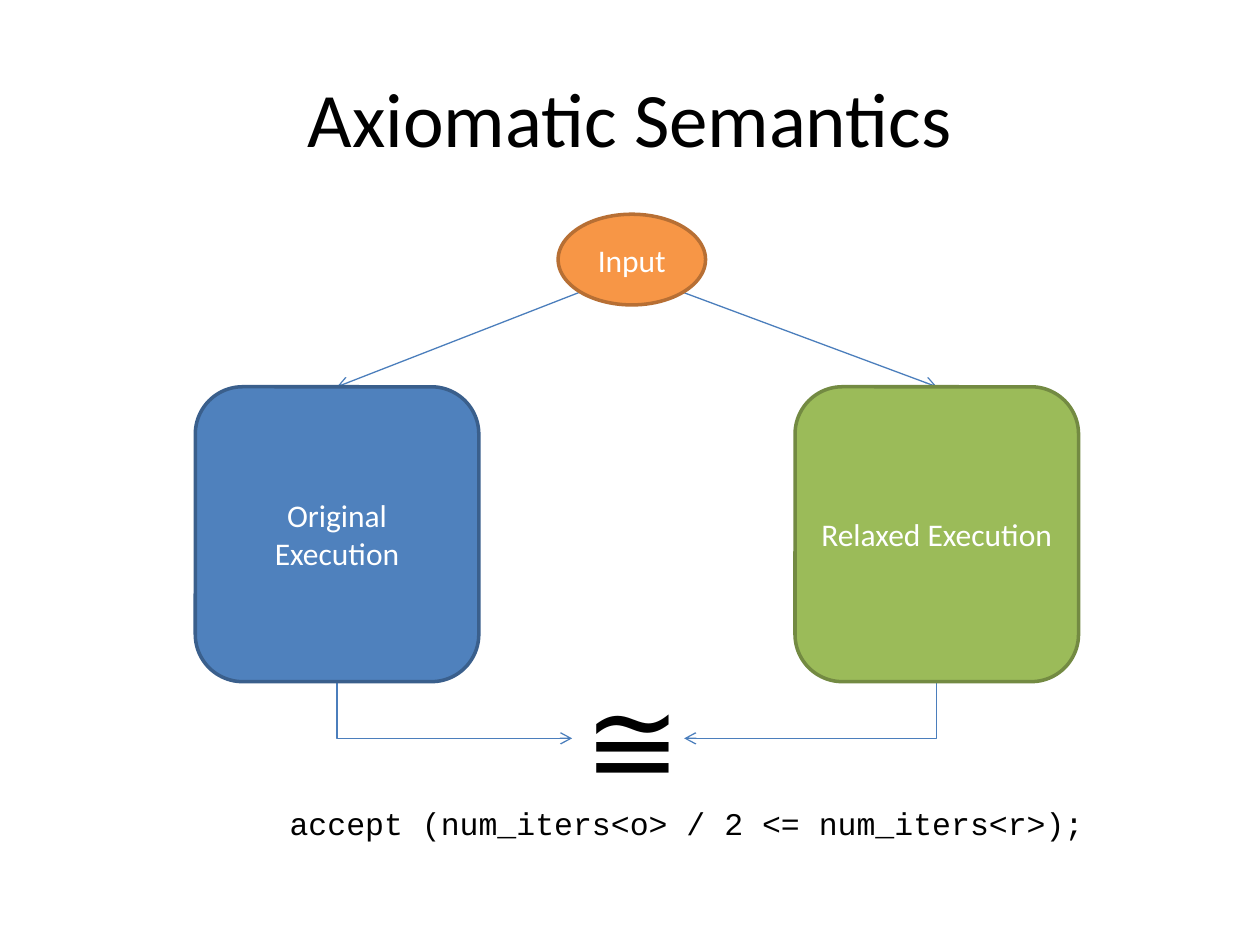
"""Builds the Axiomatic Semantics slide."""
from lxml import etree
from pptx import Presentation
from pptx.dml.color import RGBColor
from pptx.enum.shapes import MSO_CONNECTOR, MSO_SHAPE
from pptx.enum.text import MSO_ANCHOR, MSO_AUTO_SIZE, PP_ALIGN
from pptx.oxml.ns import qn
from pptx.util import Inches, Pt

STRAIGHT, ELBOW = MSO_CONNECTOR.STRAIGHT, MSO_CONNECTOR.ELBOW
OVAL, ROUNDED = MSO_SHAPE.OVAL, MSO_SHAPE.ROUNDED_RECTANGLE
MIDDLE, TOP = MSO_ANCHOR.MIDDLE, MSO_ANCHOR.TOP
CENTER, LEFT = PP_ALIGN.CENTER, PP_ALIGN.LEFT
GROW = MSO_AUTO_SIZE.SHAPE_TO_FIT_TEXT
BLACK, WHITE, ARROW = "000000", "FFFFFF", "4B7EBC"


def color(value):
    return RGBColor.from_string(value)


class SlideBuilder:
    def __init__(self, deck):
        self.page = deck.slides.add_slide(deck.slide_layouts[5])

    def put_text(self, box, text, size, ink, align=CENTER, font="Calibri", **frame_format):
        frame = box.text_frame
        for name, value in frame_format.items():
            setattr(frame, name, value)
        para = frame.paragraphs[0]
        para.alignment = align
        span = para.add_run()
        span.text = text
        for name, value in {"name": font, "size": Pt(size)}.items():
            setattr(span.font, name, value)
        span.font.color.rgb = color(ink)

    def title(self, text, bounds):
        box = self.page.shapes.title
        for name, value in zip(("left", "top", "width", "height"), bounds):
            setattr(box, name, Inches(value))
        self.put_text(box, text, 44, BLACK, vertical_anchor=MIDDLE)

    def label(self, text, bounds, size, font="Calibri", wrap=True):
        box = self.page.shapes.add_textbox(*map(Inches, bounds))
        self.put_text(box, text, size, BLACK, LEFT, font,
                      word_wrap=wrap, auto_size=GROW, vertical_anchor=TOP)

    def node(self, kind, text, bounds, fill, outline):
        box = self.page.shapes.add_shape(kind, *map(Inches, bounds))
        box.shadow.inherit = False
        box.fill.solid()
        box.fill.fore_color.rgb = color(fill)
        box.line.color.rgb = color(outline)
        box.line.width = Pt(2)
        self.put_text(box, text, 18, WHITE, word_wrap=True, vertical_anchor=MIDDLE)

    def arrow(self, kind, start, end):
        link = self.page.shapes.add_connector(kind, *map(Inches, start + end))
        link.line.color.rgb = color(ARROW)
        link.line.width = Pt(0.75)
        properties = link.element.spPr
        outline = properties.find(qn("a:ln"))
        etree.SubElement(outline, qn("a:tailEnd"), type="arrow")
        etree.SubElement(properties, qn("a:effectLst"))
        return link

    def corner_arrow(self, start, end):
        """Draws an arrow that runs down first and then sideways."""
        across, down = abs(end[0] - start[0]), end[1] - start[1]
        left = (start[0] + end[0] - down) / 2
        top = (start[1] + end[1] - across) / 2
        link = self.arrow(ELBOW, (left, top), (left + down, top + across))
        properties = link.element.spPr
        properties.find(qn("a:prstGeom")).set("prst", "bentConnector2")
        transform = properties.find(qn("a:xfrm"))
        if end[0] > start[0]:
            transform.set("rot", str(270 * 60000))
            transform.set("flipH", "1")
        else:
            transform.set("rot", str(90 * 60000))


def main():
    deck = Presentation()
    deck.slide_width, deck.slide_height = Inches(10), Inches(7.5)
    slide = SlideBuilder(deck)
    slide.title("Axiomatic Semantics", (0.5, 0.3, 9, 1.25))

    node_top, node_width, node_height = 3.07, 2.25, 2.34
    nodes = [
        ("Original Execution", 1.55, "4F81BD", "3A5F8C", 4.6, 4.54),
        ("Relaxed Execution", 6.31, "9BBB59", "738A42", 5.42, 5.43),
    ]
    for text, left, fill, outline, input_x, result_x in nodes:
        middle = left + node_width / 2
        slide.arrow(STRAIGHT, (input_x, 2.32), (middle, node_top))
        slide.corner_arrow((middle, node_top + node_height), (result_x, 5.86))
        slide.node(ROUNDED, text, (left, node_top, node_width, node_height), fill, outline)

    slide.node(OVAL, "Input", (4.43, 1.7, 1.17, 0.72), "F79646", "B76F34")
    slide.label("≅", (4.54, 5.25, 0.89, 1.21), 66, wrap=False)
    slide.label(" accept (num_iters<o> / 2 <= num_iters<r>);",
                (2.05, 6.33, 6.83, 0.4), 18, "Courier New")
    deck.save("out.pptx")


if __name__ == "__main__":
    main()
